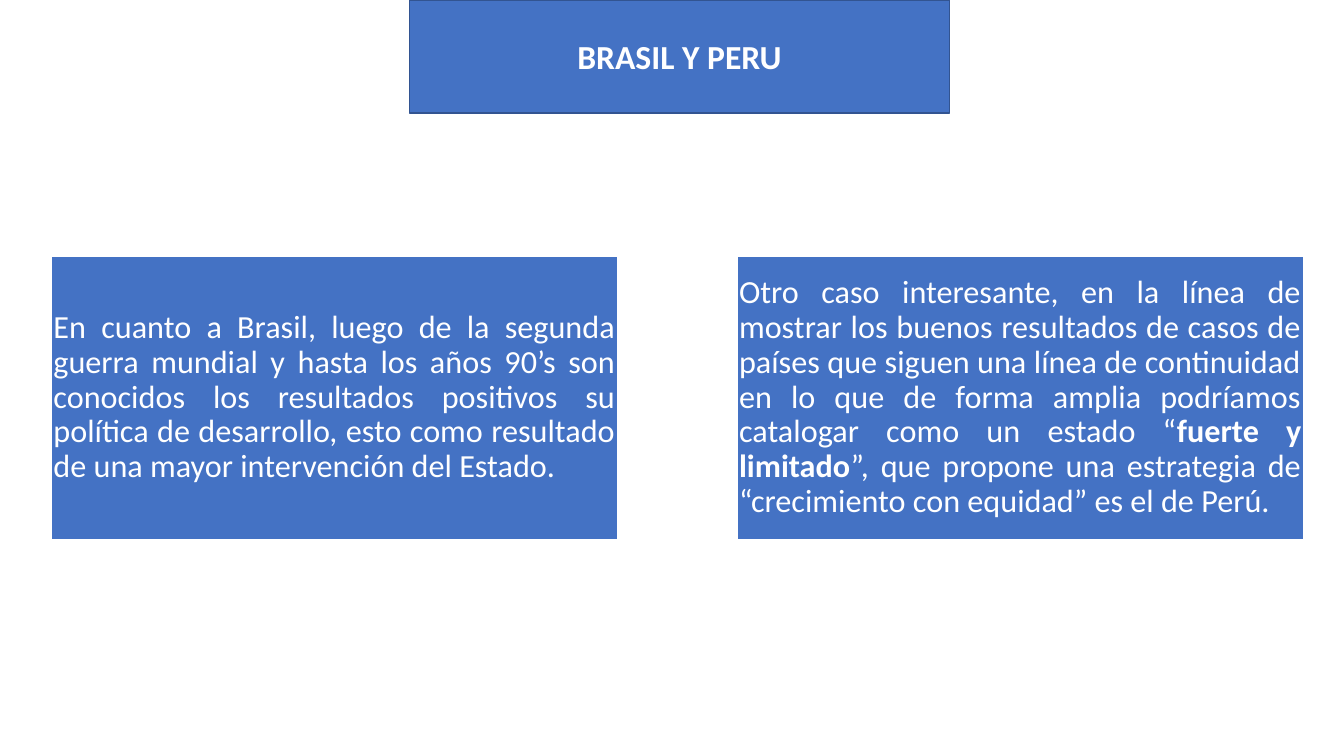
import pptx
import pptx.dml.color
import pptx.enum.shapes
import pptx.enum.text
import pptx.util
from pptx.util import Inches

BLUE = pptx.dml.color.RGBColor(0x44, 0x72, 0xC4)
DARK_BLUE = pptx.dml.color.RGBColor(0x32, 0x54, 0x91)
WHITE = pptx.dml.color.RGBColor(0xFF, 0xFF, 0xFF)
ALIGN = pptx.enum.text.PP_ALIGN


def add_box(left, top, width, height, outline, alignment, size, runs):
    """Add a blue rectangle whose text is a list of (text, bold) runs."""
    shape = slide.shapes.add_shape(
        pptx.enum.shapes.MSO_SHAPE.RECTANGLE,
        Inches(left), Inches(top), Inches(width), Inches(height))
    shape.shadow.inherit = False
    shape.fill.solid()
    shape.fill.fore_color.rgb = BLUE
    shape.line.color.rgb = outline
    shape.line.width = pptx.util.Pt(1)
    frame = shape.text_frame
    frame.word_wrap = True
    frame.vertical_anchor = pptx.enum.text.MSO_ANCHOR.MIDDLE
    paragraph = frame.paragraphs[0]
    paragraph.alignment = alignment
    for text, bold in runs:
        run = paragraph.add_run()
        run.text = text
        run.font.name = "Calibri"
        run.font.size = pptx.util.Pt(size)
        run.font.bold = bold
        run.font.color.rgb = WHITE
    return frame


presentation = pptx.Presentation()
presentation.slide_width = Inches(13.33)
presentation.slide_height = Inches(7.5)
slide = presentation.slides.add_slide(presentation.slide_layouts[6])

brazil = [
    ("En cuanto a Brasil, luego de la segunda guerra mundial y hasta los años "
     "90’s son conocidos los resultados positivos su política de desarrollo, "
     "esto como resultado de una mayor intervención del Estado. ", False),
]
peru = [
    ("Otro caso interesante, en la línea de mostrar los buenos resultados de "
     "casos de países que siguen una línea de continuidad en lo que de forma "
     "amplia podríamos catalogar como un estado “", False),
    ("fuerte y limitado", True),
    ("”, que propone una estrategia de “crecimiento con equidad” es el de Perú.",
     False),
]

for left, country in ((0.51, brazil), (7.31, peru)):
    frame = add_box(left, 2.54, 5.62, 2.81, WHITE, ALIGN.JUSTIFY, 23, country)
    frame.margin_left = frame.margin_right = Inches(0.02)
    frame.margin_top = frame.margin_bottom = Inches(0.02)
    frame.paragraphs[0].line_spacing = 0.9

add_box(4.06, 0, 5.36, 1.12, DARK_BLUE, ALIGN.CENTER, 24, [("BRASIL Y PERU", True)])

presentation.save("out.pptx")
